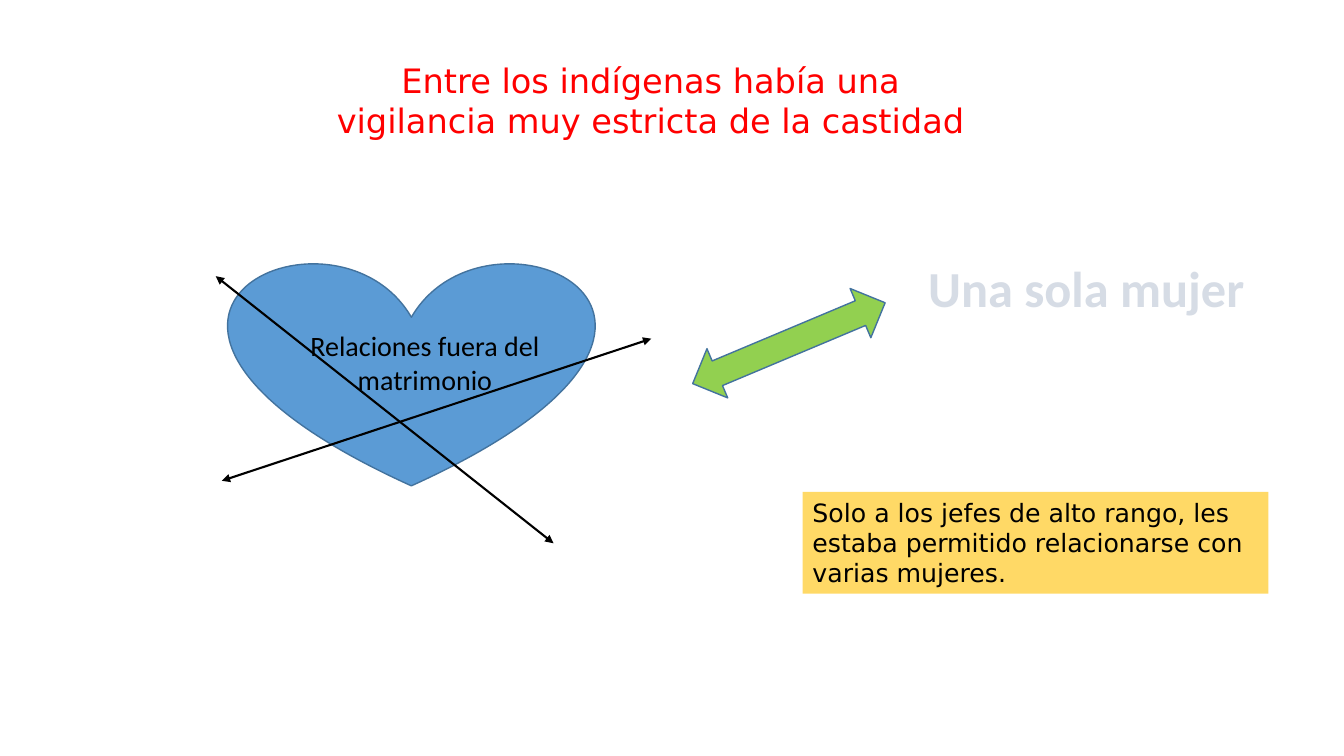
import dataclasses

import lxml.etree
import pptx
import pptx.dml.color
import pptx.enum.shapes
import pptx.enum.text
import pptx.oxml.ns
import pptx.util

Inches = pptx.util.Inches
Shape = pptx.enum.shapes.MSO_SHAPE
Align = pptx.enum.text.PP_ALIGN


@dataclasses.dataclass(frozen=True)
class Theme:
    heading_font: str = "DejaVu Sans"
    body_font: str = "Calibri"
    black: str = "000000"
    red: str = "FF0000"
    blue: str = "5B9BD5"
    outline: str = "43739E"
    green: str = "92D050"
    yellow: str = "FFD966"
    pale: str = "D6DCE5"
    note_size: int = 18
    label_size: int = 20
    title_size: int = 24
    accent_size: int = 36
    outline_width: float = 1
    strike_width: float = 1.5


def rgb(value):
    return pptx.dml.color.RGBColor.from_string(value)


def write_text(shape, text, *, font, size, color, bold=False, align=Align.LEFT, wrap=True):
    frame = shape.text_frame
    frame.word_wrap = wrap
    frame.vertical_anchor = pptx.enum.text.MSO_ANCHOR.TOP
    paragraph = frame.paragraphs[0]
    paragraph.alignment = align
    run = paragraph.add_run()
    run.text = text
    run.font.name = font
    run.font.size = pptx.util.Pt(size)
    run.font.bold = bold
    run.font.color.rgb = rgb(color)


class SlideBuilder:
    def __init__(self, slide, theme):
        self.slide = slide
        self.theme = theme

    def shape(self, kind, left, top, width, height, fill, outlined=True, rotation=0):
        shape = self.slide.shapes.add_shape(
            kind, Inches(left), Inches(top), Inches(width), Inches(height))
        shape.shadow.inherit = False
        shape.rotation = rotation
        shape.fill.solid()
        shape.fill.fore_color.rgb = rgb(fill)
        if outlined:
            shape.line.color.rgb = rgb(self.theme.outline)
            shape.line.width = pptx.util.Pt(self.theme.outline_width)
        else:
            shape.line.fill.background()
        return shape

    def text(self, text, left, top, width, height, **text_format):
        box = self.slide.shapes.add_textbox(
            Inches(left), Inches(top), Inches(width), Inches(height))
        write_text(box, text, align=Align.CENTER, **text_format)

    def double_arrow(self, start, end):
        """Draw a straight line with an arrowhead at both ends."""
        connector = self.slide.shapes.add_connector(
            pptx.enum.shapes.MSO_CONNECTOR.STRAIGHT,
            *(Inches(value) for value in (*start, *end)))
        connector.line.color.rgb = rgb(self.theme.black)
        connector.line.width = pptx.util.Pt(self.theme.strike_width)
        line = connector.line._get_or_add_ln()
        for tag in ("a:headEnd", "a:tailEnd"):
            lxml.etree.SubElement(line, pptx.oxml.ns.qn(tag), type="triangle")
        properties = connector._element.spPr
        lxml.etree.SubElement(properties, pptx.oxml.ns.qn("a:effectLst"))


def main():
    presentation = pptx.Presentation()
    presentation.slide_width = Inches(13.33)
    presentation.slide_height = Inches(7.5)
    theme = Theme()
    builder = SlideBuilder(
        presentation.slides.add_slide(presentation.slide_layouts[6]), theme)

    note = builder.shape(Shape.RECTANGLE, 7.96, 4.88, 4.62, 1.01, theme.yellow, outlined=False)
    write_text(
        note,
        "Solo a los jefes de alto rango, les estaba permitido relacionarse con varias mujeres.",
        font=theme.heading_font, size=theme.note_size, color=theme.black)

    builder.text(
        "Entre los indígenas había una vigilancia muy estricta de la castidad",
        3.12, 0.54, 6.67, 0.91,
        font=theme.heading_font, size=theme.title_size, color=theme.red)

    builder.shape(Shape.HEART, 2.27, 2.59, 3.62, 2.23, theme.blue)
    builder.text(
        "Relaciones fuera del matrimonio", 2.95, 3.21, 2.53, 0.77,
        font=theme.body_font, size=theme.label_size, color=theme.black)
    builder.double_arrow((2.14, 2.74), (5.49, 5.39))
    builder.double_arrow((2.2, 4.77), (6.46, 3.36))

    builder.shape(Shape.LEFT_RIGHT_ARROW, 6.79, 3.14, 2.07, 0.53, theme.green, rotation=337.2)
    builder.text(
        "Una sola mujer", 9.09, 2.5, 3.37, 0.71,
        font=theme.body_font, size=theme.accent_size, color=theme.pale, bold=True, wrap=False)

    presentation.save("out.pptx")


if __name__ == "__main__":
    main()
